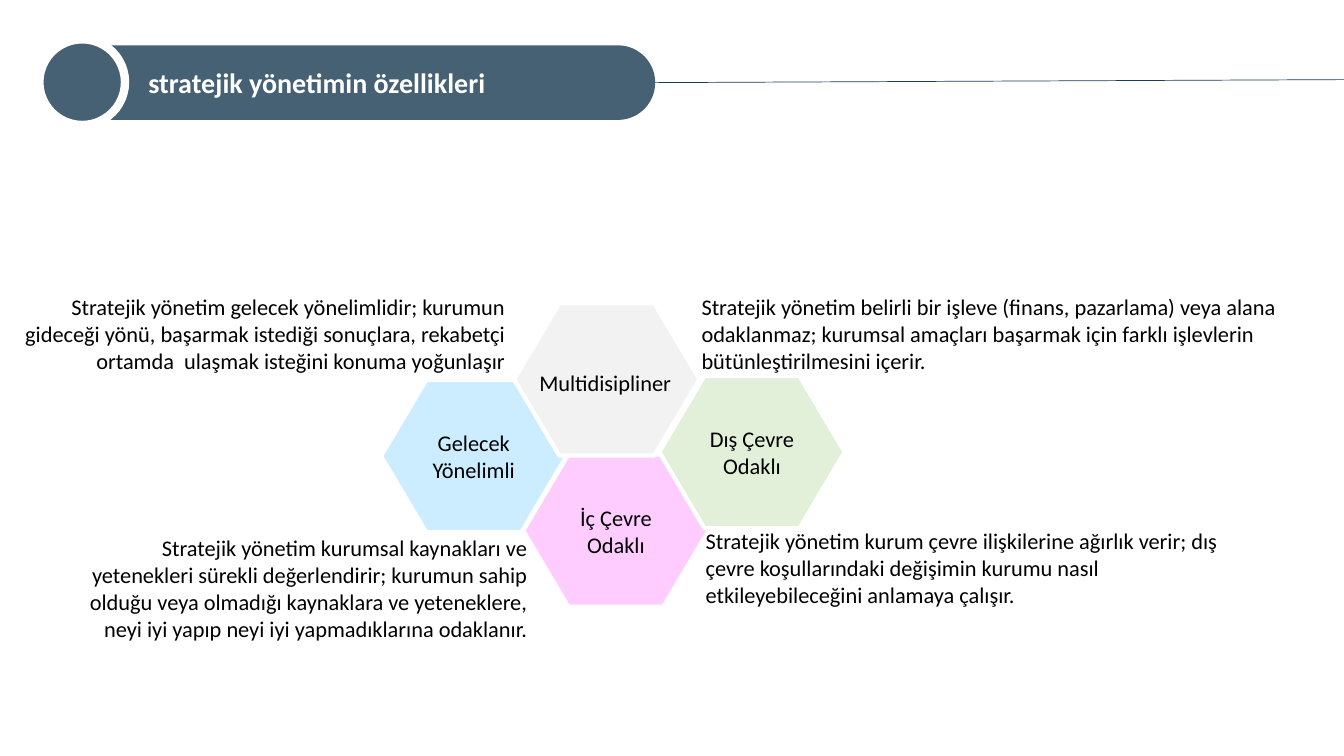
from pptx import Presentation
from pptx.dml.color import RGBColor
from pptx.enum.shapes import MSO_CONNECTOR as Link, MSO_SHAPE as Kind
from pptx.enum.text import MSO_ANCHOR as Anchor, PP_ALIGN as Align
from pptx.util import Inches, Pt
from lxml.etree import SubElement

THEME = dict(font="Calibri", body=16, head=20, ink="000000", white="FFFFFF",
             slate="456173", navy="1B3C59", blue="CCECFF", pink="FFCCFF",
             green="E2F0D9", gray="F2F2F2")

deck = Presentation()
deck.slide_width, deck.slide_height = Inches(13.333), Inches(7.5)
cell = deck.slide_width / 40  # square grid: 40 columns, 22.5 rows
slide = deck.slides.add_slide(deck.slide_layouts[6])
shapes = slide.shapes


def draw(kind, box, fill, edge=0, adj=None):
    """Add a filled preset shape; box is left, top, width, height in cells."""
    shape = shapes.add_shape(kind, *(int(n * cell) for n in box))
    shape.shadow.inherit = False
    shape.fill.solid()
    shape.fill.fore_color.rgb = RGBColor.from_string(THEME[fill])
    if edge:
        shape.line.color.rgb = RGBColor.from_string(THEME["white"])
        shape.line.width = Pt(edge)
    else:
        shape.line.fill.background()
    if adj is not None:
        shape.adjustments[0] = adj
    return shape


def write(text, shape=None, box=None, size="body", color="ink", bold=False,
          align=Align.LEFT, anchor=Anchor.TOP, inset=0.3):
    """Put text in the shape, or in a new text box; inset is in cells."""
    if shape is None:
        shape = shapes.add_textbox(*(int(n * cell) for n in box))
    frame = shape.text_frame
    frame.word_wrap = True
    frame.vertical_anchor = anchor
    frame.margin_left = int(inset * cell)
    para = frame.paragraphs[0]
    para.alignment = align
    run = para.add_run()
    run.text = text
    run.font.name, run.font.size = THEME["font"], Pt(THEME[size])
    run.font.bold = bold
    run.font.color.rgb = RGBColor.from_string(THEME[color])
    return shape


# Title bar
bar = draw(Kind.ROUNDED_RECTANGLE, (1.17, 1.35, 18.33, 2.22), "slate", adj=0.5)
write("stratejik yönetimin özellikleri", bar, size="head", color="white",
      bold=True, anchor=Anchor.MIDDLE, inset=2.92)
draw(Kind.OVAL, (1.17, 1.17, 2.55, 2.55), "slate", edge=6)

rule = shapes.add_connector(Link.STRAIGHT, 0, 0, int(40 * cell), int(2.37 * cell))
rule.begin_connect(bar, 3)
rule.line.color.rgb = RGBColor.from_string(THEME["navy"])
rule.line.width = Pt(0.5)
SubElement(rule.line._get_or_add_ln().getparent(),
           "{http://schemas.openxmlformats.org/drawingml/2006/main}effectLst")

# Honeycomb
HEX = (5.52, 4.53)
for left, top, fill, label in (
    (11.34, 11.31, "blue", "Gelecek Yönelimli"),
    (15.57, 13.53, "pink", "İç Çevre Odaklı"),
    (19.62, 11.19, "green", "Dış Çevre Odaklı"),
    (15.3, 9.03, "gray", None),
):
    comb = draw(Kind.HEXAGON, (left, top, *HEX), fill, edge=3, adj=0.297)
    if label:
        write(label, comb, align=Align.CENTER, anchor=Anchor.MIDDLE)
name = write("Multidisipliner", box=(15.75, 10.83, 5.25, 1.11))
shapes.add_group_shape([comb, name])

# Notes around the honeycomb
for box, align, note in (
    ((20.58, 8.58, 17.88, 2.73), Align.LEFT,
     "Stratejik yönetim belirli bir işleve (finans, pazarlama) veya alana "
     "odaklanmaz; kurumsal amaçları başarmak için farklı işlevlerin "
     "bütünleştirilmesini içerir."),
    ((20.7, 15.54, 16.05, 2.73), Align.LEFT,
     "Stratejik yönetim kurum çevre ilişkilerine ağırlık verir; dış çevre "
     "koşullarındaki değişimin kurumu nasıl etkileyebileceğini anlamaya "
     "çalışır."),
    ((2.31, 15.75, 13.68, 3.54), Align.RIGHT,
     "Stratejik yönetim kurumsal kaynakları ve yetenekleri sürekli "
     "değerlendirir; kurumun sahip olduğu veya olmadığı kaynaklara ve "
     "yeteneklere, neyi iyi yapıp neyi iyi yapmadıklarına odaklanır."),
    ((0.09, 8.58, 15.24, 2.73), Align.RIGHT,
     "Stratejik yönetim gelecek yönelimlidir; kurumun gideceği yönü, "
     "başarmak istediği sonuçlara, rekabetçi ortamda  ulaşmak isteğini "
     "konuma yoğunlaşır"),
):
    write(note, box=box, align=align)

deck.save("out.pptx")
